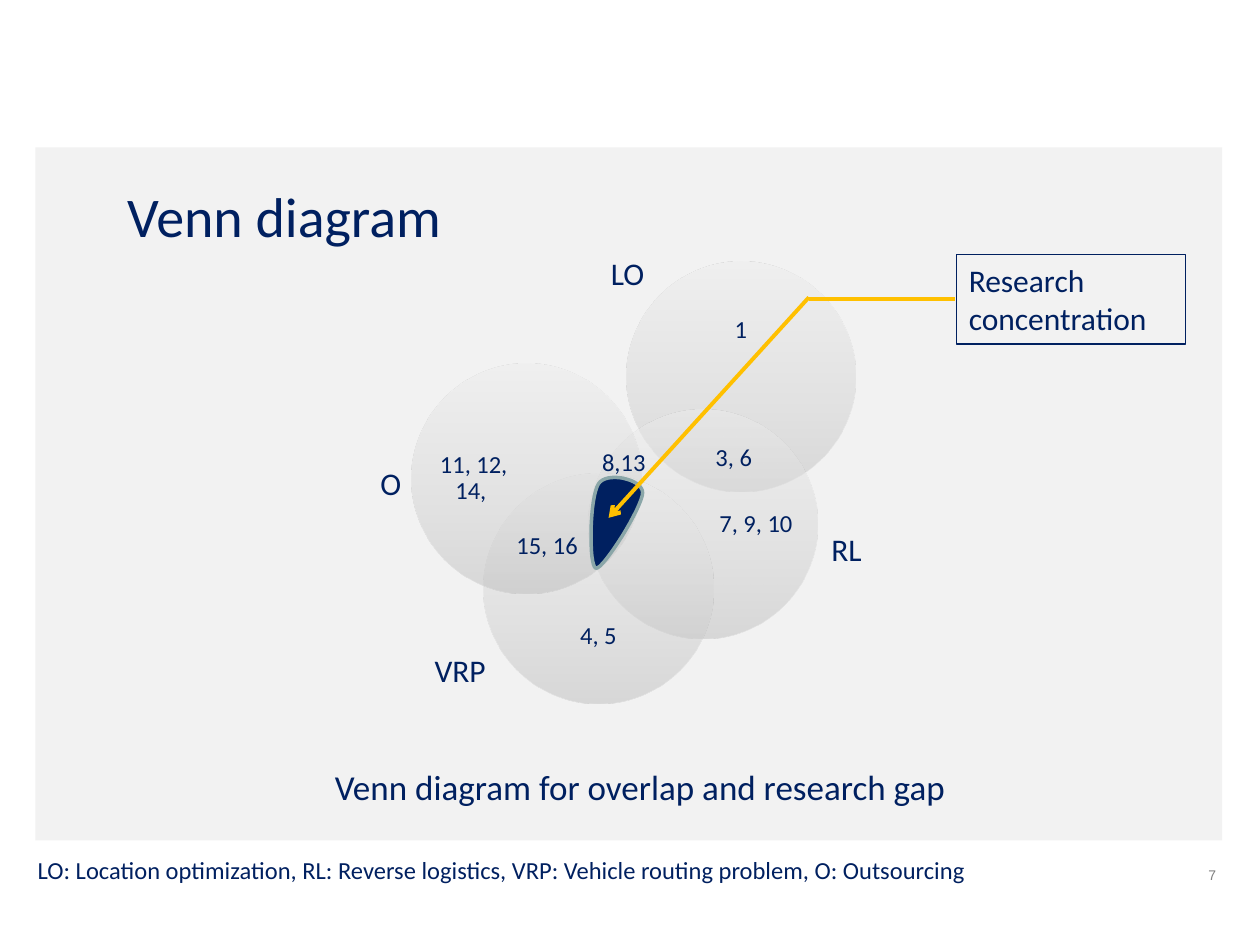
import pptx
import pptx.dml.color
import pptx.enum.shapes
import pptx.enum.text
import pptx.oxml
import pptx.oxml.ns
import pptx.util

Inches = pptx.util.Inches
Pt = pptx.util.Pt
Align = pptx.enum.text.PP_ALIGN
Anchor = pptx.enum.text.MSO_ANCHOR
Preset = pptx.enum.shapes.MSO_SHAPE

NAVY = "002060"
GOLD = "FFC000"
CIRCLE_SIZE = 1.82
CIRCLE_STOPS = [(0, "BDBDBD"), (35, "D1D1D1"), (100, "EEEEEE")]


def colour(hex_text):
    return pptx.dml.color.RGBColor.from_string(hex_text)


def drawing_xml(tag, content=""):
    namespace = pptx.oxml.ns.nsdecls("a")
    return pptx.oxml.parse_xml(f"<a:{tag} {namespace}>{content}</a:{tag}>")


def write(frame, text, size=14, font="Calibri", ink=NAVY, align=Align.LEFT,
          anchor=Anchor.TOP, margins=(0.1, 0.05), spacing=None):
    frame.word_wrap = True
    frame.auto_size = pptx.enum.text.MSO_AUTO_SIZE.NONE
    frame.vertical_anchor = anchor
    frame.margin_left = frame.margin_right = Inches(margins[0])
    frame.margin_top = frame.margin_bottom = Inches(margins[1])
    para = frame.paragraphs[0]
    para.alignment = align
    if spacing:
        para.line_spacing = spacing
    span = para.add_run()
    span.text = text
    span.font.size = Pt(size)
    span.font.name = font
    span.font.color.rgb = colour(ink)


def curve_points(start, curves, steps=16):
    """Sample a chain of cubic Bezier curves."""
    points = [start]
    for first, second, end in curves:
        for step in range(1, steps + 1):
            t = step / steps
            weights = ((1 - t) ** 3, 3 * t * (1 - t) ** 2,
                       3 * t ** 2 * (1 - t), t ** 3)
            corners = (start, first, second, end)
            points.append(tuple(
                sum(weight * corner[axis]
                    for weight, corner in zip(weights, corners))
                for axis in (0, 1)))
        start = end
    return points


class SlideBuilder:
    def __init__(self, page):
        self.page = page

    def title(self, text, place, **style):
        box = self.page.shapes.title
        box.left, box.top, box.width, box.height = map(Inches, place)
        write(box.text_frame, text, **style)
        box.element.getparent().append(box.element)  # bring to front

    def text(self, text, place, **style):
        box = self.page.shapes.add_textbox(*map(Inches, place))
        write(box.text_frame, text, **style)

    def finish(self, shape, fill=None, line=None, width=1):
        shape.shadow.inherit = False
        if fill:
            shape.fill.solid()
            shape.fill.fore_color.rgb = colour(fill)
        else:
            shape.fill.background()
        if line:
            shape.line.color.rgb = colour(line)
            shape.line.width = Pt(width)
        else:
            shape.line.fill.background()

    def rectangle(self, place, text=None, fill=None, line=None, width=1, **style):
        shape = self.page.shapes.add_shape(Preset.RECTANGLE, *map(Inches, place))
        self.finish(shape, fill, line, width)
        if text:
            write(shape.text_frame, text, **style)

    def circle(self, left, top):
        shape = self.page.shapes.add_shape(
            Preset.OVAL, *map(Inches, (left, top, CIRCLE_SIZE, CIRCLE_SIZE)))
        self.finish(shape)
        stops = "".join(
            f'<a:gs pos="{place * 1000}"><a:srgbClr val="{tint}">'
            f'<a:alpha val="50000"/></a:srgbClr></a:gs>'
            for place, tint in CIRCLE_STOPS)
        gradient = drawing_xml(
            "gradFill", f'<a:gsLst>{stops}</a:gsLst><a:lin ang="16200000" scaled="0"/>')
        properties = shape.element.spPr
        properties.replace(
            properties.find(pptx.oxml.ns.qn("a:noFill")), gradient)

    def curved_area(self, start, curves, **look):
        points = [(x * 1000, y * 1000) for x, y in curve_points(start, curves)]
        outline = self.page.shapes.build_freeform(*points[0], scale=Inches(1) / 1000)
        outline.add_line_segments(points[1:], close=True)
        self.finish(outline.convert_to_shape(), **look)

    def line(self, start, end, arrow=False):
        connector = self.page.shapes.add_connector(
            pptx.enum.shapes.MSO_CONNECTOR.STRAIGHT, *map(Inches, start + end))
        connector.line.color.rgb = colour(GOLD)
        connector.line.width = Pt(2.25)
        properties = connector.element.spPr
        if arrow:
            head = drawing_xml("tailEnd")
            head.set("type", "arrow")
            properties.find(pptx.oxml.ns.qn("a:ln")).append(head)
        properties.append(drawing_xml("effectLst"))


def main():
    deck = pptx.Presentation()
    deck.slide_width, deck.slide_height = Inches(10), Inches(7.5)
    builder = SlideBuilder(deck.slides.add_slide(deck.slide_layouts[5]))

    # Panel and page number
    builder.rectangle((0.28, 1.17, 9.42, 5.5), fill="F2F2F2")
    builder.text("7", (9.33, 6.83, 0.42, 0.5), size=8, font="Arial",
                 ink="808080", align=Align.RIGHT)

    # Circles with the papers that belong to one topic only
    circles = [
        (4.97, 2.08, "1", (5.18, 2.33, 1.4, 0.58)),
        (4.67, 3.25, "7, 9, 10", (5.65, 3.46, 0.7, 1.4)),
        (3.84, 3.76, "4, 5", (4.05, 4.76, 1.4, 0.58)),
        (3.27, 2.89, "11, 12, 14, ", (3.41, 3.1, 0.7, 1.4)),
    ]
    for left, top, papers, place in circles:
        builder.circle(left, top)
        builder.text(papers, place, align=Align.CENTER, anchor=Anchor.MIDDLE,
                     margins=(0, 0), spacing=0.9)

    # Papers in the overlaps, then topic names
    for papers, left, top, width in [("15, 16", 4, 4.16, 0.83),
                                     ("3, 6", 5.58, 3.46, 0.58),
                                     ("8,13", 4.68, 3.5, 0.62)]:
        builder.text(papers, (left, top, width, 0.34))
    for topic, left, top, width in [("LO", 4.75, 1.97, 0.58),
                                    ("O", 2.92, 3.63, 0.35),
                                    ("VRP", 3.35, 5.12, 0.71),
                                    ("RL", 6.5, 4.16, 0.58)]:
        builder.text(topic, (left, top, width, 0.4), size=18)

    # Research gap and its callout
    builder.curved_area((4.73, 4.51), [
        ((4.67, 4.5), (4.68, 3.94), (4.75, 3.84)),
        ((4.81, 3.74), (5.1, 3.8), (5.1, 3.91)),
        ((5.1, 4.02), (4.79, 4.52), (4.73, 4.51)),
    ], fill=NAVY, line="8AA6A8", width=2)
    builder.line((6.42, 2.37), (7.58, 2.37))
    builder.rectangle((7.59, 2.02, 1.82, 0.71), "Research concentration",
                      line=NAVY, width=0.75, size=18)
    builder.line((6.42, 2.36), (4.83, 4.11), arrow=True)

    # Title, caption and legend
    builder.title("Venn diagram", (0.91, 1.39, 3.51, 0.64), size=32)
    builder.text("Venn diagram for overlap and research gap",
                 (2.56, 6.03, 6.14, 0.77), size=20)
    builder.text("LO: Location optimization, RL: Reverse logistics, "
                 "VRP: Vehicle routing problem, O: Outsourcing",
                 (0.2, 6.74, 9.45, 0.64))

    deck.save("out.pptx")


if __name__ == "__main__":
    main()
